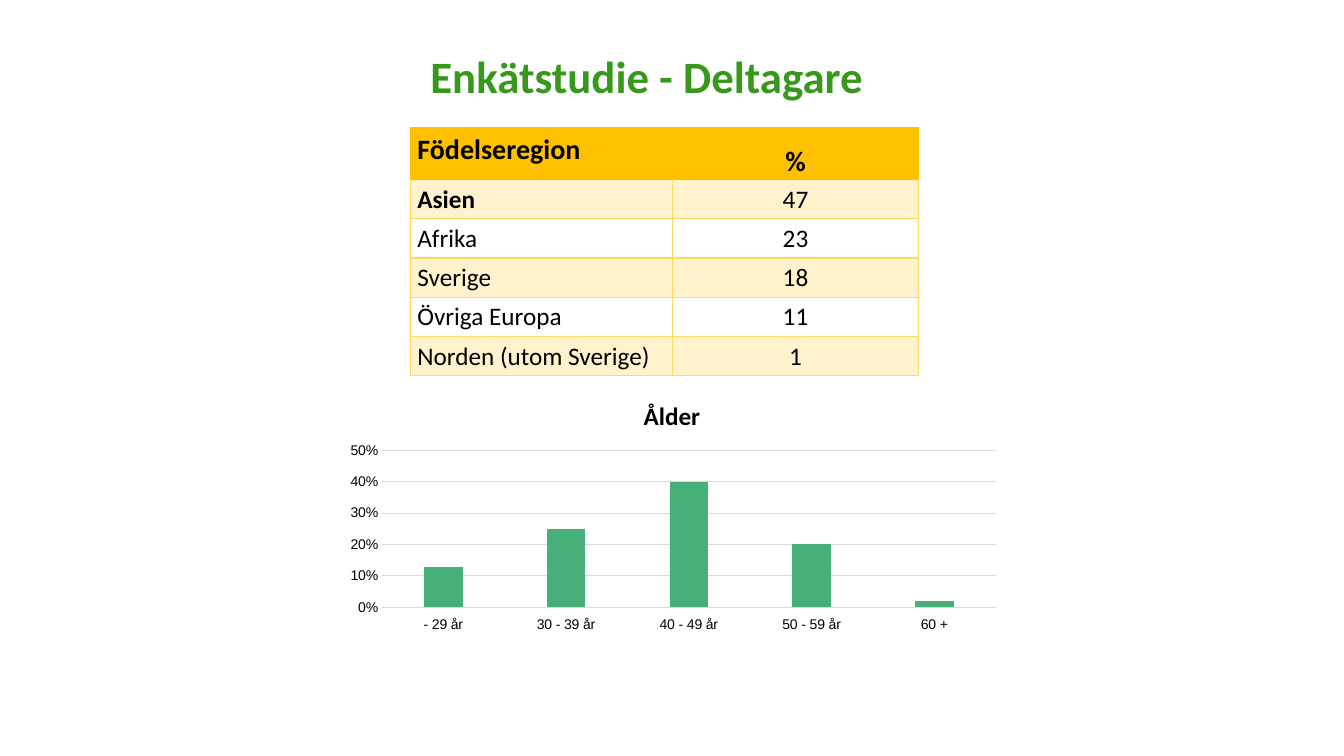
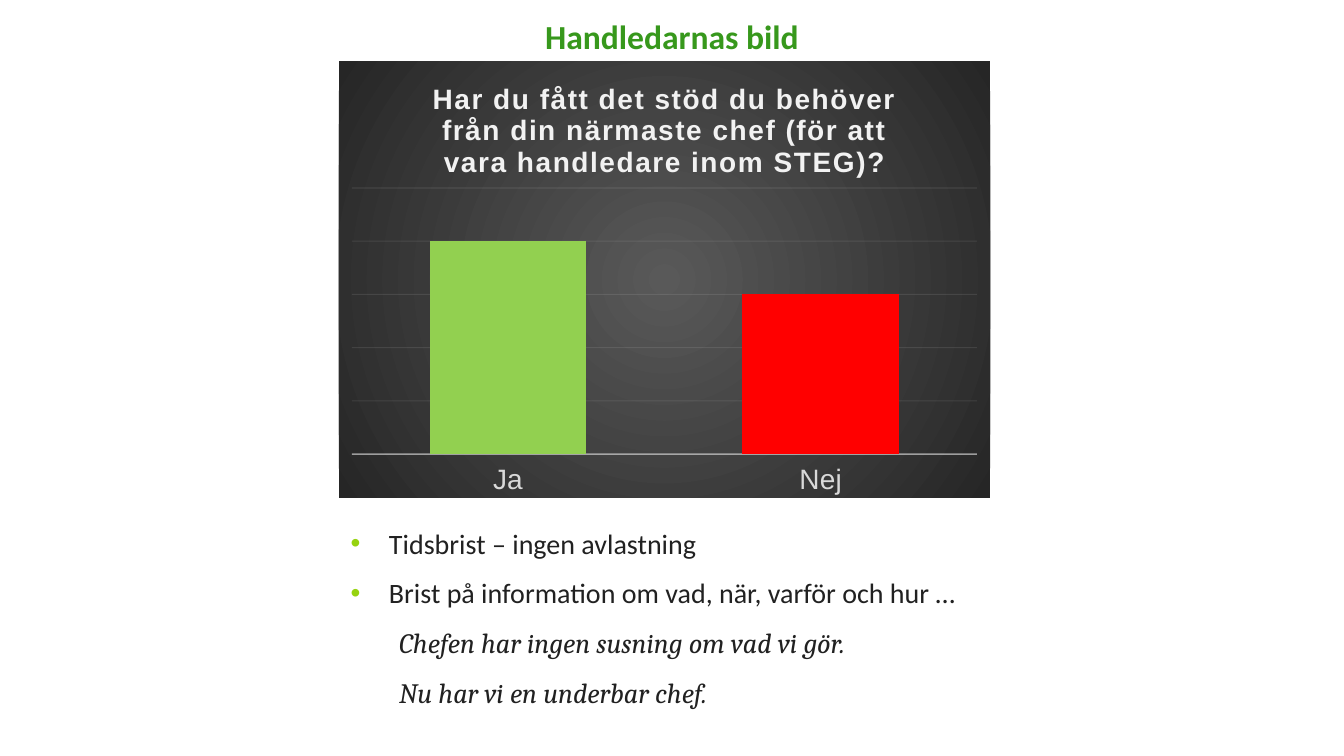
from pptx import Presentation
from pptx.chart.data import CategoryChartData
from pptx.dml.color import RGBColor
from pptx.enum.chart import XL_CHART_TYPE as ChartType, XL_TICK_LABEL_POSITION as LabelPosition, XL_TICK_MARK as TickMark
from pptx.enum.text import PP_ALIGN as Align
from pptx.oxml import parse_xml
from pptx.oxml.ns import nsdecls
from pptx.util import Inches, Pt

COLORS = {
    "title": "37981C", "black": "000000", "body": "212121", "bullet": "96D30F",
    "header": "FFC000", "border": "FFD966", "band": "FFF2CC",
    "grid": "D9D9D9", "column": "46AF7A", "light": "F2F2F2",
    "yes": "92D050", "no": "FF0000", "centre": "595959", "edge": "262626",
}
BODY_FONT, QUOTE_FONT, CHART_FONT = "Calibri", "Cambria", "Arial"

REGIONS = [
    ("Födelseregion", "%"), ("Asien", "47"), ("Afrika", "23"),
    ("Sverige", "18"), ("Övriga Europa", "11"), ("Norden (utom Sverige)", "1"),
]
AGES = {"- 29 år": 0.13, "30 - 39 år": 0.25, "40 - 49 år": 0.4, "50 - 59 år": 0.2, "60 +": 0.02}
SUPPORT = {"Ja": 100, "Nej": 75}
QUESTION = "Har du fått det stöd du behöver från din närmaste chef (för att vara handledare inom STEG)?"
REMARKS = [
    ("Tidsbrist – ingen avlastning", False),
    ("Brist på information om vad, när, varför och hur …", False),
    ("Chefen har ingen susning om vad vi gör.", True),
    ("Nu har vi en underbar chef.", True),
]


def rgb(name):
    return RGBColor.from_string(COLORS[name])


def style_font(font, size, color, name=BODY_FONT, bold=False, italic=False):
    font.size, font.name, font.bold, font.italic = Pt(size), name, bold, italic
    font.color.rgb = rgb(color)


def add_text_box(page, box):
    frame = page.shapes.add_textbox(*map(Inches, box)).text_frame
    frame.word_wrap = True
    return frame


def add_title(page, text, box, size):
    para = add_text_box(page, box).paragraphs[0]
    para.text, para.alignment = text, Align.CENTER
    style_font(para.font, size, "title", bold=True)


def set_borders(cell, **sides):
    props = cell._tc.get_or_add_tcPr()
    for side in "LRTB":
        props.append(parse_xml(
            f'<a:ln{side} {nsdecls("a")} w="12700"><a:solidFill>'
            f'<a:srgbClr val="{COLORS[sides[side]]}"/></a:solidFill></a:ln{side}>'))


def add_region_table(page, box, widths, heights):
    table = page.shapes.add_table(len(REGIONS), 2, *map(Inches, box)).table
    table.first_row = table.horz_banding = False
    for column, width in zip(table.columns, widths):
        column.width = Inches(width)
    for row, height in zip(table.rows, heights):
        row.height = Inches(height)
    for row, values in enumerate(REGIONS):
        for column, value in enumerate(values):
            cell = table.cell(row, column)
            cell.margin_left = cell.margin_right = Inches(0.07)
            cell.margin_top = cell.margin_bottom = 0
            edge = "border" if row else "header"
            set_borders(cell, L=edge, R=edge, T="header" if row < 2 else edge, B=edge)
            if row % 2 or row == 0:
                cell.fill.solid()
                cell.fill.fore_color.rgb = rgb("band" if row else "header")
            else:
                cell.fill.background()
            para = cell.text_frame.paragraphs[0]
            para.text = value
            para.line_spacing = 1.5 if (row, column) == (0, 1) else 1.15
            para.alignment = Align.CENTER if column else Align.LEFT
            style_font(para.font, 18 if row else 20, "black",
                       bold=row == 0 or (row, column) == (1, 0))


def place_plot(chart, area):
    plot_area = chart.element.xpath("c:chart/c:plotArea")[0]
    for layout in plot_area.xpath("c:layout"):
        plot_area.remove(layout)
    parts = "".join(f'<c:{key} val="{value}"/>' for key, value in zip("xywh", area))
    plot_area.insert(0, parse_xml(
        f'<c:layout {nsdecls("c")}><c:manualLayout><c:layoutTarget val="inner"/>'
        f'<c:xMode val="edge"/><c:yMode val="edge"/>{parts}</c:manualLayout></c:layout>'))


def add_column_chart(page, box, data, title, title_size, title_color, title_font,
                     area, step, top, gap, overlap, grid):
    source = CategoryChartData()
    source.categories = list(data)
    source.add_series("Series 1", list(data.values()))
    chart = page.shapes.add_chart(ChartType.COLUMN_CLUSTERED, *map(Inches, box), source).chart
    chart.has_legend = False
    style_font(chart.font, 10, "black", CHART_FONT)
    chart.has_title = True
    chart.chart_title.include_in_layout = False
    para = chart.chart_title.text_frame.paragraphs[0]
    para.text = title
    style_font(para.font, title_size, title_color, title_font, bold=True)
    plot = chart.plots[0]
    plot.gap_width, plot.overlap, plot.vary_by_categories = gap, overlap, False
    for axis in (chart.category_axis, chart.value_axis):
        axis.major_tick_mark = axis.minor_tick_mark = TickMark.NONE
    chart.category_axis.format.line.color.rgb = rgb(grid)
    chart.category_axis.tick_label_position = LabelPosition.LOW
    values = chart.value_axis
    values.minimum_scale, values.maximum_scale, values.major_unit = 0, top, step
    values.format.line.fill.background()
    values.has_major_gridlines = True
    values.major_gridlines.format.line.color.rgb = rgb(grid)
    values.major_gridlines.format.line.width = Pt(0.75)
    place_plot(chart, area)
    return chart


def add_age_chart(page, box):
    chart = add_column_chart(page, box, AGES, "Ålder", 18, "black", BODY_FONT,
                             (0.07, 0.27, 0.91, 0.63), 0.1, 0.5, 219, -27, "grid")
    chart.category_axis.format.line.width = Pt(0.75)
    labels = chart.value_axis.tick_labels
    labels.number_format, labels.number_format_is_linked = "#0%", False
    fill = chart.plots[0].series[0].format.fill
    fill.solid()
    fill.fore_color.rgb = rgb("column")


def set_line_opacity(chart, line_owner, percent):
    for color in chart.element.xpath(f"c:chart/c:plotArea/{line_owner}/c:spPr/a:ln//a:srgbClr"):
        color.append(parse_xml(f'<a:alpha {nsdecls("a")} val="{percent * 1000}"/>'))


def add_radial_background(chart):
    stops = "".join(f'<a:gs pos="{place}"><a:srgbClr val="{COLORS[name]}"/></a:gs>'
                    for place, name in ((0, "centre"), (100000, "edge")))
    chart.element.xpath("c:chart")[0].addnext(parse_xml(
        f'<c:spPr {nsdecls("c", "a")}><a:gradFill><a:gsLst>{stops}</a:gsLst>'
        '<a:path path="circle"><a:fillToRect l="50000" t="50000" r="50000" b="50000"/></a:path>'
        '</a:gradFill><a:ln><a:noFill/></a:ln></c:spPr>'))


def add_support_chart(page, box):
    chart = add_column_chart(page, box, SUPPORT, QUESTION, 20, "light", CHART_FONT,
                             (0.02, 0.29, 0.96, 0.61), 25, 125, 100, -24, "light")
    chart.category_axis.format.line.width = Pt(1)
    style_font(chart.category_axis.tick_labels.font, 20, "grid", CHART_FONT)
    chart.value_axis.visible = False
    set_line_opacity(chart, "c:catAx", 54)
    set_line_opacity(chart, "c:valAx/c:majorGridlines", 10)
    for props in chart.element.xpath("c:chart/c:title//a:defRPr"):
        props.set("spc", "100")
    add_radial_background(chart)
    for index, color in enumerate(("yes", "no")):
        fill = chart.plots[0].series[0].points[index].format.fill
        fill.solid()
        fill.fore_color.rgb = rgb(color)


def set_indent(para, left, first, bullet):
    props = para._p.get_or_add_pPr()
    props.set("marL", str(Inches(left)))
    props.set("indent", str(Inches(first)))
    if bullet:
        for xml in (f'<a:buClr {nsdecls("a")}><a:srgbClr val="{COLORS["bullet"]}"/></a:buClr>',
                    f'<a:buFont {nsdecls("a")} typeface="Arial"/>',
                    f'<a:buChar {nsdecls("a")} char="•"/>'):
            props.append(parse_xml(xml))


def add_remarks(page, box):
    frame = add_text_box(page, box)
    for index, (text, quote) in enumerate(REMARKS):
        para = frame.add_paragraph() if index else frame.paragraphs[0]
        para.text, para.line_spacing = text, 1.15
        if index:
            para.space_before = Pt(8)
        if quote:
            set_indent(para, 0.09, 0.39, False)
        else:
            set_indent(para, 0.38, -0.38, True)
        style_font(para.font, 20, "body", QUOTE_FONT if quote else BODY_FONT, italic=quote)


def build_participants(page):
    add_title(page, "Enkätstudie - Deltagare", (2.32, 0.43, 8.19, 0.64), 32)
    add_age_chart(page, (3.32, 3.8, 6.69, 2.48))
    add_region_table(page, (4.07, 1.27, 5.04, 2.46), (2.6, 2.44), [0.51] + [0.39] * 5)


def build_supervisors(page):
    add_title(page, "Handledarnas bild", (2.57, 0.11, 8.19, 0.5), 24)
    add_support_chart(page, (3.36, 0.61, 6.46, 4.33))
    add_remarks(page, (3.38, 5.12, 7.16, 1.96))


def main():
    deck = Presentation()
    deck.slide_width, deck.slide_height = Inches(13.33), Inches(7.5)
    for build in (build_participants, build_supervisors):
        build(deck.slides.add_slide(deck.slide_layouts[6]))
    deck.save("out.pptx")


if __name__ == "__main__":
    main()
